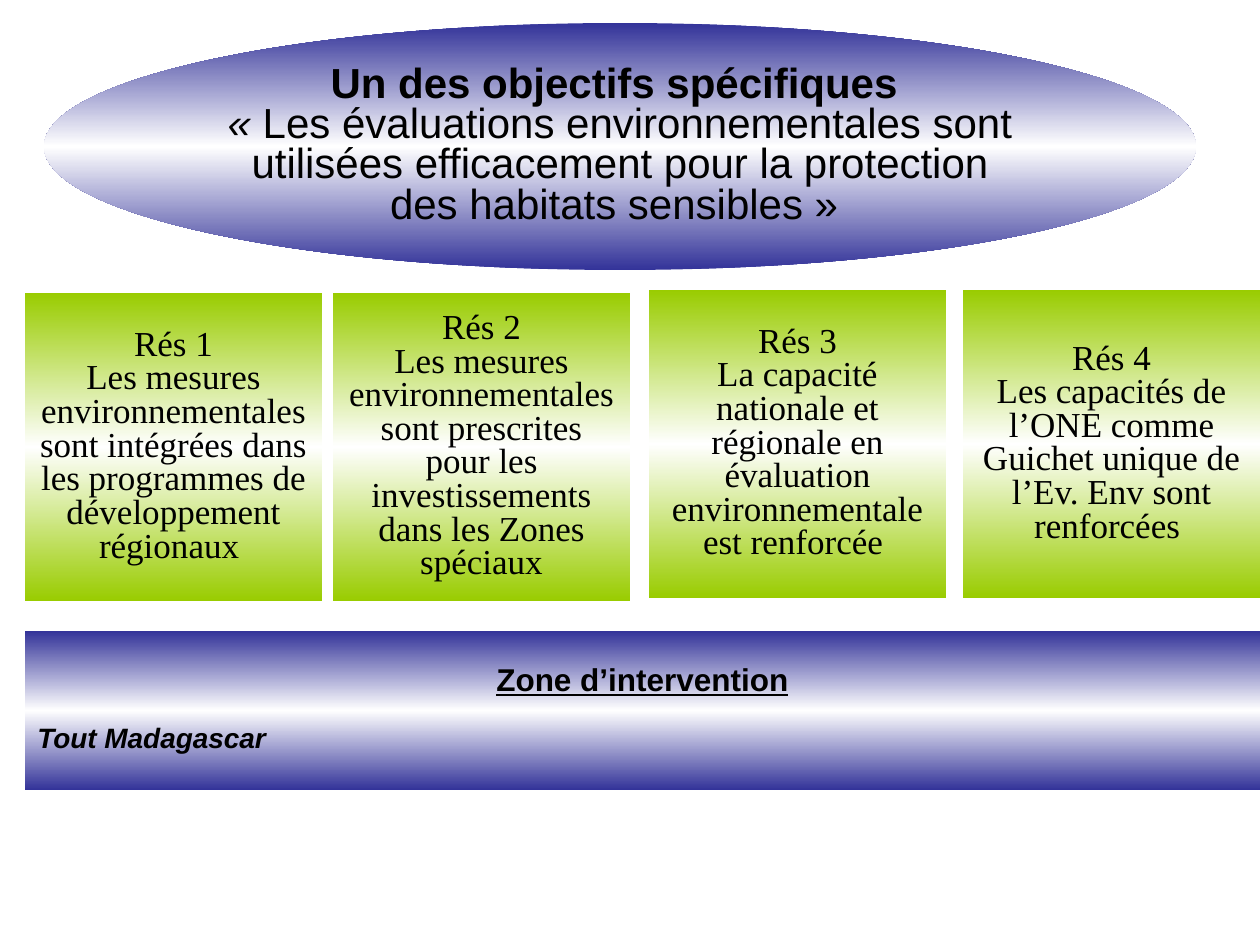
from copy import deepcopy

from pptx import Presentation
from pptx.dml.color import RGBColor
from pptx.enum.shapes import MSO_SHAPE
from pptx.enum.text import MSO_ANCHOR, PP_ALIGN
from pptx.util import Emu, Pt

OVAL, RECT = MSO_SHAPE.OVAL, MSO_SHAPE.RECTANGLE
LEFT, CENTER = PP_ALIGN.LEFT, PP_ALIGN.CENTER
MIDDLE = MSO_ANCHOR.MIDDLE
SANS, SERIF = "Arial", "Times New Roman"
HUES = {"blue": "333399", "green": "99CC00", "white": "FFFFFF", "text": "000000"}

GOAL = ("« Les évaluations environnementales sont utilisées efficacement "
        "pour la protection des habitats sensibles » ")
CARDS = [
    (25, 293, "Rés 1", "Les mesures environnementales sont intégrées dans "
     "les programmes de développement régionaux "),
    (333, 293, "Rés 2", "Les mesures environnementales sont prescrites "
     "pour les investissements dans les Zones spéciaux"),
    (649, 290, "Rés 3", "La capacité nationale et régionale en évaluation "
     "environnementale est renforcée "),
    (963, 290, "Rés 4", "Les capacités de l’ONE comme Guichet unique de "
     "l’Ev. Env sont renforcées "),
]


def px(n):
    return Emu(round(n * 914400 / 126))


def hue(name):
    return RGBColor.from_string(HUES[name])


def shade(shape, edge):
    fill = shape.fill
    fill.gradient()
    fill.gradient_angle = 270
    stops = shape.element.spPr.gradFill.gsLst
    stops.insert(1, deepcopy(stops[0]))
    parts = zip(fill.gradient_stops, (0, 0.5, 1), (edge, "white", edge))
    for stop, spot, name in parts:
        stop.position = spot
        stop.color.rgb = hue(name)


def add_panel(slide, kind, box, edge):
    shape = slide.shapes.add_shape(kind, *map(px, box))
    shape.shadow.inherit = False
    shape.line.fill.background()
    shade(shape, edge)
    shape.text_frame.word_wrap = True
    shape.text_frame.vertical_anchor = MIDDLE
    return shape.text_frame


def style(run, face, size, bold=False, slant=False, under=False):
    font = run.font
    font.name, font.size = face, Pt(size)
    font.bold, font.italic, font.underline = bold, slant, under
    font.color.rgb = hue("text")


def write(para, text, face, size, align=CENTER, **looks):
    para.text = text
    para.alignment = align
    para.line_spacing = 0.8
    style(para.runs[0], face, size, **looks)
    return para


def add_goal(slide):
    frame = add_panel(slide, OVAL, (44, 23, 1152, 247), "blue")
    write(frame.paragraphs[0], "Un des objectifs spécifiques ", SANS, 24, bold=True)
    para = write(frame.add_paragraph(), GOAL[0], SANS, 24, slant=True)
    rest = para.add_run()
    rest.text = GOAL[1:]
    style(rest, SANS, 24)


def add_card(slide, left, top, head, body):
    frame = add_panel(slide, RECT, (left, top, 297, 308), "green")
    write(frame.paragraphs[0], head, SERIF, 20)
    write(frame.add_paragraph(), body, SERIF, 20)


def add_zone(slide):
    frame = add_panel(slide, RECT, (25, 631, 1235, 159), "blue")
    write(frame.paragraphs[0], "Zone d’intervention", SANS, 18, bold=True, under=True)
    para = write(frame.add_paragraph(), "Tout Madagascar", SANS, 16, LEFT,
                 bold=True, slant=True)
    para.space_before = Pt(16.5)


def main():
    deck = Presentation()
    deck.slide_width, deck.slide_height = px(1260), px(945)
    slide = deck.slides.add_slide(deck.slide_layouts[6])
    add_goal(slide)
    for card in CARDS:
        add_card(slide, *card)
    add_zone(slide)
    deck.save("out.pptx")


if __name__ == "__main__":
    main()
